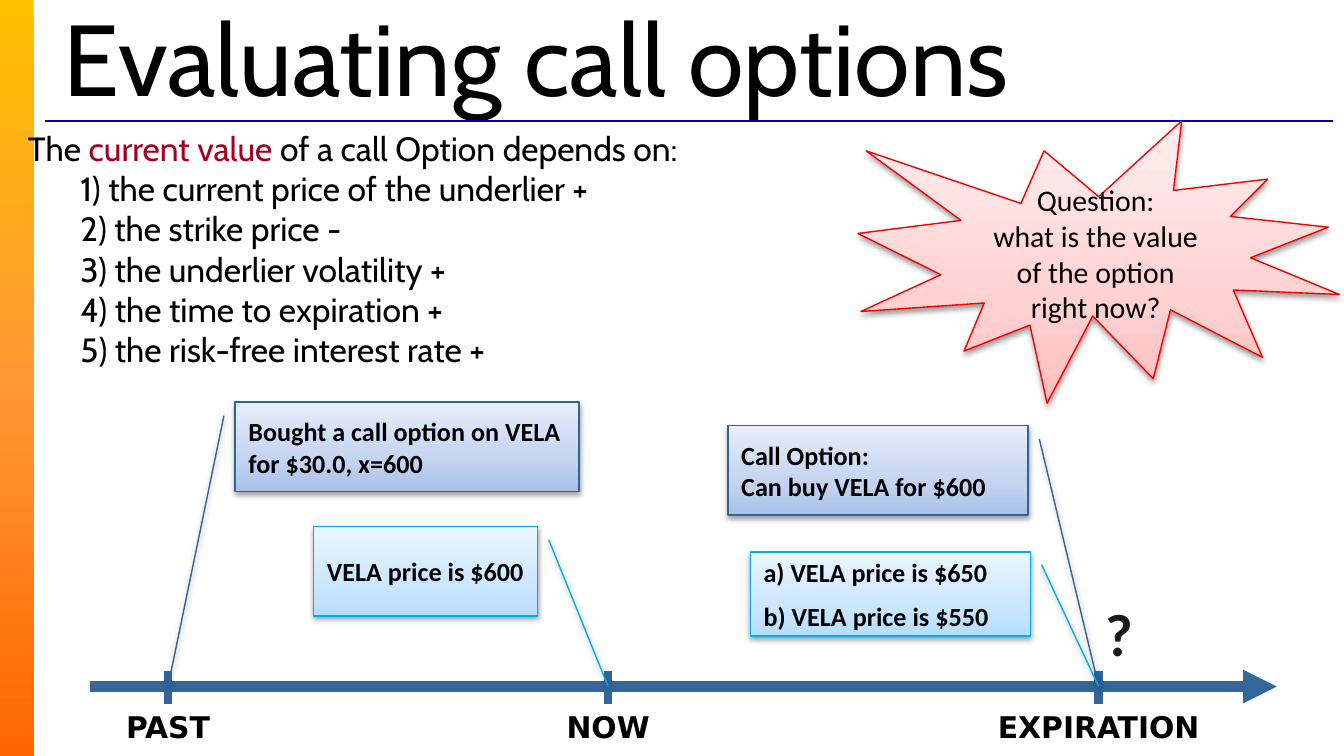
from collections import namedtuple

from lxml.etree import SubElement
from pptx import Presentation
from pptx.dml.color import RGBColor
from pptx.enum.shapes import MSO_CONNECTOR as Link, MSO_SHAPE as Shape
from pptx.enum.text import MSO_ANCHOR as Anchor, MSO_AUTO_SIZE as Fit, PP_ALIGN as Align
from pptx.oxml.ns import qn
from pptx.util import Inches, Pt

COLORS = {
    "ink": "000000", "mark": "1A1A1A", "accent": "A50021",
    "rule": "0000A5", "timeline": "336699",
    "deal_line": "2F6498", "price_line": "00ACEB", "burst_line": "F90000",
}
GRADIENTS = {
    "bar": [(0, "FFC000"), (50, "FF9933"), (100, "FF6600")],
    "deal": [(0, "A9C0E9"), (35, "C4D3EF"), (100, "E8EEFA")],
    "price": [(0, "B5DDFF"), (35, "CBE6FF"), (100, "EBF5FF")],
    "burst": [(0, "FFBDBD"), (35, "FFD1D1"), (100, "FFEEEE")],
}
COLS, ROWS = 120, 67.5  # grid of twelfths of an inch
CELL = Inches(1) // 12
AXIS_ROW = 61.3
MOMENTS = {"PAST": 15, "NOW": 54.3, "EXPIRATION": 98.1}

Box = namedtuple("Box", "left top width height")


def cells(*values):
    return [round(value * CELL) for value in values]


def rgb(name):
    return RGBColor.from_string(COLORS[name])


def paint(shape, gradient, angle):
    """Fill with three stops; the angle runs counterclockwise."""
    shape.fill.gradient()
    shape.fill.gradient_angle = angle
    stops = shape.fill._fill._gradFill.find(qn("a:gsLst"))
    for stop in list(stops):
        stops.remove(stop)
    for position, color in GRADIENTS[gradient]:
        stop = SubElement(stops, qn("a:gs"), pos=str(position * 1000))
        SubElement(stop, qn("a:srgbClr"), val=color)


def drop_shadow(shape):
    shape.shadow.inherit = False
    effects = shape._element.spPr.find(qn("a:effectLst"))
    shadow = SubElement(effects, qn("a:outerShdw"), blurRad=str(Pt(3.1)),
                        dist=str(Pt(1.6)), dir="5400000", rotWithShape="0")
    color = SubElement(shadow, qn("a:srgbClr"), val=COLORS["ink"])
    SubElement(color, qn("a:alpha"), val="38000")


def write(shape, paragraphs, size, font="Calibri", bold=False, align=Align.LEFT,
          anchor=Anchor.MIDDLE, inset=0.1, wrap=True, gap=0):
    """Each paragraph is a list of (text, color) runs; newlines become line breaks."""
    frame = shape.text_frame
    frame.auto_size, frame.word_wrap, frame.vertical_anchor = Fit.NONE, wrap, anchor
    frame.margin_left = frame.margin_right = Inches(inset)
    frame.margin_top = frame.margin_bottom = Inches(min(inset, 0.05))
    for index, runs in enumerate(paragraphs):
        paragraph = frame.add_paragraph() if index else frame.paragraphs[0]
        paragraph.alignment = align
        paragraph.space_before = Pt(gap if index else 0)
        for text, color in runs:
            for number, line in enumerate(text.split("\n")):
                if number:
                    paragraph.add_line_break()
                run = paragraph.add_run()
                run.text = line
                run.font.name, run.font.size, run.font.bold = font, Pt(size), bold
                run.font.color.rgb = rgb(color)
    return frame


def add_line(slide, start, end, color, width):
    line = slide.shapes.add_connector(Link.STRAIGHT, *cells(*start, *end))
    line.line.color.rgb, line.line.width = rgb(color), Pt(width)
    SubElement(line._element.spPr, qn("a:effectLst"))
    return line


def add_panel(slide, kind, box, style):
    panel = slide.shapes.add_shape(kind, *cells(*box))
    paint(panel, style, 90)
    panel.line.color.rgb, panel.line.width = rgb(style + "_line"), Pt(0.75)
    drop_shadow(panel)
    return panel


def add_frame(slide, bar, title_box):
    side_bar = slide.shapes.add_shape(Shape.RECTANGLE, *cells(*bar))
    paint(side_bar, "bar", 270)
    side_bar.line.fill.background()
    side_bar.shadow.inherit = False
    add_line(slide, (4, 10.8), (119, 10.8), "rule", 0.75)
    title = slide.shapes.title
    title.left, title.top, title.width, title.height = cells(*title_box)
    write(title, [[("Evaluating call options", "ink")]], 54, "Cabin")


def add_factors(slide, box):
    factors = slide.shapes.add_textbox(*cells(*box))
    frame = write(factors, [[
        ("The ", "ink"), ("current value ", "accent"),
        ("of a call Option depends on:\n"
         "1) the current price of the underlier +\n"
         "2) the strike price -\n"
         "3) the underlier volatility +\n"
         "4) the time to expiration +\n"
         "5) the risk-free interest rate +", "ink"),
    ]], 18, "Cabin", anchor=Anchor.TOP)
    hanging = frame.paragraphs[0]._p.get_or_add_pPr()
    hanging.set("marL", str(Inches(0.5)))
    hanging.set("indent", str(Inches(-0.39)))


def add_callout(slide, box, style, moment, lines):
    """Box whose leader runs from the side nearer the moment to the axis."""
    callout = add_panel(slide, Shape.LINE_CALLOUT_1, box, style)
    target = MOMENTS[moment]
    start = -1 if target < box.left else box.width + 1
    leader = (0.15, start / box.width, (AXIS_ROW - box.top) / box.height,
              (target - box.left) / box.width)
    for index, value in enumerate(leader):
        callout.adjustments[index] = value
    write(callout, [[(line, "ink")] for line in lines], 14, bold=True, gap=7)


def add_timeline(slide, box):
    axis = add_line(slide, (box.left, AXIS_ROW), (box.left + box.width, AXIS_ROW),
                    "timeline", 6)
    SubElement(axis.line._get_or_add_ln(), qn("a:tailEnd"), type="triangle")
    for moment, column in MOMENTS.items():
        add_line(slide, (column, box.top), (column, box.top + 3), "timeline", 4.5)
        label = slide.shapes.add_textbox(*cells(column - 11, box.top + 2.2, 22, 5.6))
        write(label, [[(moment, "ink")]], 16, "DejaVu Sans", bold=True, align=Align.CENTER)


def add_question(slide, box):
    burst = add_panel(slide, Shape.EXPLOSION1, box, "burst")
    write(burst, [[("Question:\nwhat is the value\nof the option\nright now?", "ink")]],
          16, align=Align.CENTER, wrap=False)


def add_unknown(slide, box):
    unknown = slide.shapes.add_textbox(*cells(*box))
    write(unknown, [[("?", "mark")]], 32, bold=True, align=Align.CENTER, inset=0)


def main():
    deck = Presentation()
    deck.slide_width, deck.slide_height = cells(COLS, ROWS)
    slide = deck.slides.add_slide(deck.slide_layouts[5])
    add_frame(slide, Box(0, 0, 3, ROWS), Box(4.5, 1.8, 115, 6.4))
    add_factors(slide, Box(0, 10.8, 99, 23.3))
    add_timeline(slide, Box(8, 59.9, 106, 7.6))
    callouts = [
        (Box(28, 47, 20, 8), "price", "NOW", ["VELA price is $600"]),
        (Box(65, 38, 26.8, 8), "deal", "EXPIRATION",
         ["Call Option:\nCan buy VELA for $600"]),
        (Box(21, 35.9, 30.7, 8), "deal", "PAST",
         ["Bought a call option on VELA for $30.0, x=600"]),
        (Box(67, 49.3, 25, 7.5), "price", "EXPIRATION",
         ["a) VELA price is $650", "b) VELA price is $550"]),
    ]
    for callout in callouts:
        add_callout(slide, *callout)
    add_question(slide, Box(76.6, 10.8, 43, 25.2))
    add_unknown(slide, Box(98, 53.2, 3.9, 6.5))
    deck.save("out.pptx")


if __name__ == "__main__":
    main()
